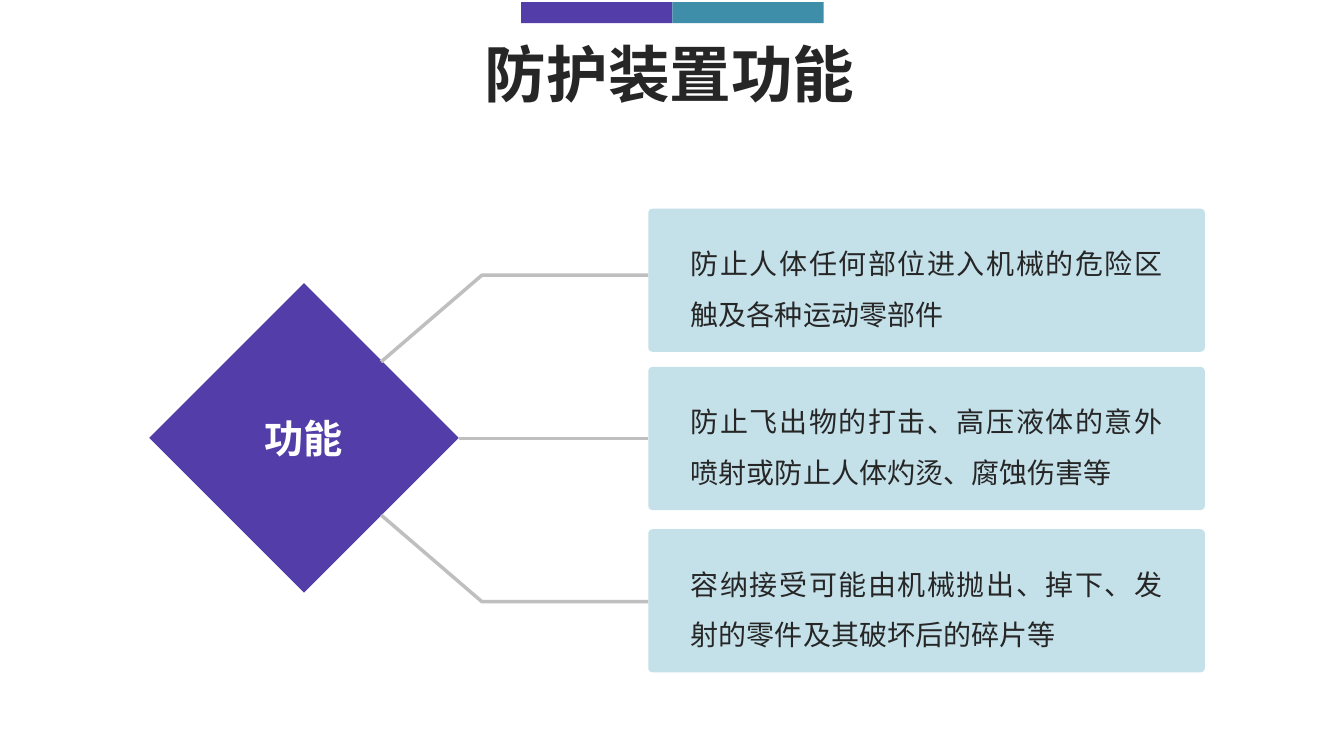
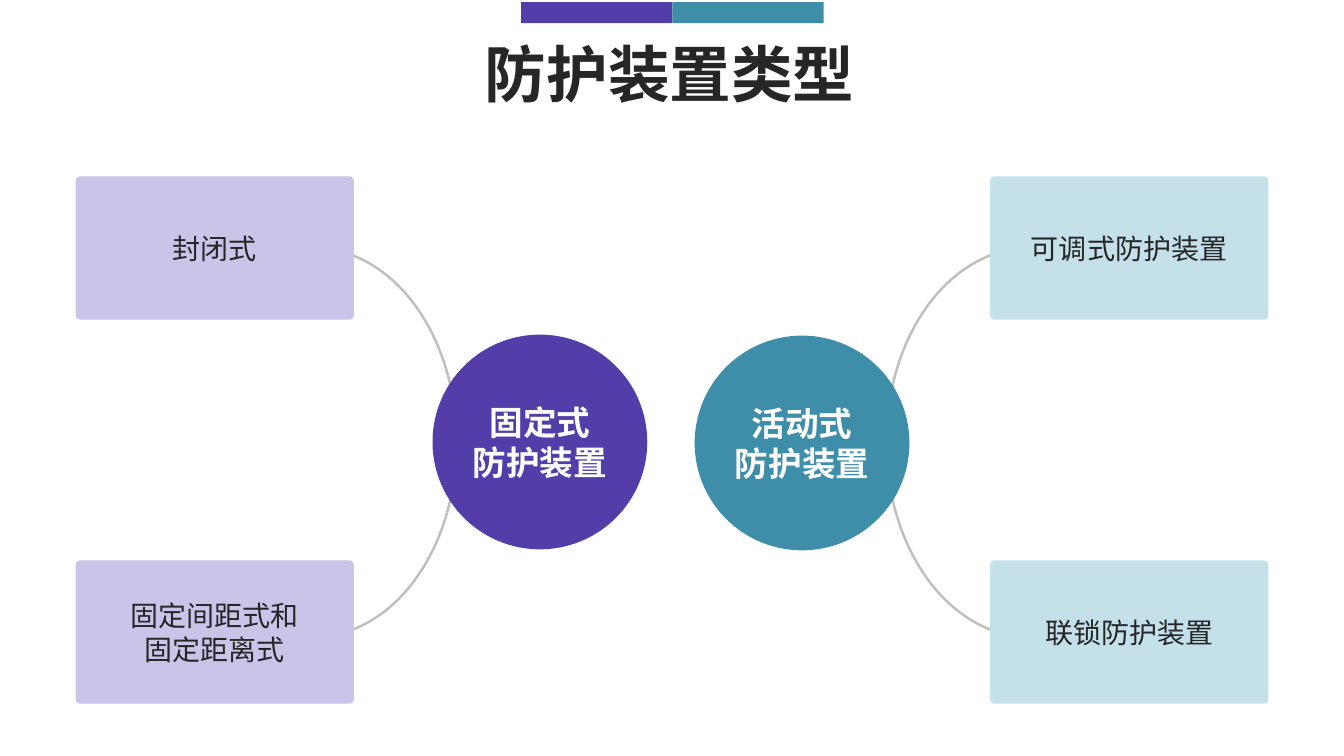
from dataclasses import dataclass

from lxml import etree
from pptx import Presentation
from pptx.dml.color import RGBColor
from pptx.enum import shapes, text
from pptx.oxml import ns
from pptx.shapes.autoshape import Shape
from pptx.slide import Slide
from pptx.util import Inches, Pt

PURPLE = RGBColor(0x53, 0x3E, 0xA9)
TEAL = RGBColor(0x3E, 0x8E, 0xA9)
PALE_PURPLE = RGBColor(0xCB, 0xC4, 0xE9)
PALE_TEAL = RGBColor(0xC4, 0xE0, 0xE9)
INK = RGBColor(0x26, 0x26, 0x26)
WHITE = RGBColor(0xFF, 0xFF, 0xFF)
GRAY = RGBColor(0xBF, 0xBF, 0xBF)
FONT = "Noto Sans CJK SC"
SHAPE = shapes.MSO_SHAPE
ALIGN = text.PP_ALIGN


@dataclass(frozen=True)
class TextStyle:
    size: int
    color: RGBColor
    bold: bool = False
    align: text.PP_ALIGN = ALIGN.CENTER
    spacing: float = 1.0


@dataclass(frozen=True)
class Area:
    left: float
    top: float
    width: float
    height: float

    def lengths(self) -> list[int]:
        return [Inches(n) for n in (self.left, self.top, self.width, self.height)]


@dataclass(frozen=True)
class Hub:
    label: str
    area: Area
    fill: RGBColor


@dataclass(frozen=True)
class TypeCard:
    label: str
    left: float
    top: float
    fill: RGBColor
    padding: float = 0.2


TITLE = TextStyle(44, INK, bold=True)
DIAMOND_LABEL = TextStyle(28, WHITE, bold=True)
HUB_LABEL = TextStyle(24, WHITE, bold=True)
CARD_LABEL = TextStyle(20, INK)
CARD_BODY = TextStyle(20, INK, align=ALIGN.JUSTIFY, spacing=1.5)

CARD_HEIGHT = 1.42


# Shared drawing functions
def write(box: Shape, words: str, style: TextStyle, padding: float = 0) -> None:
    frame = box.text_frame
    frame.text = words
    frame.word_wrap = True
    frame.vertical_anchor = text.MSO_ANCHOR.MIDDLE
    frame.margin_left = frame.margin_right = Inches(padding)
    frame.margin_top = frame.margin_bottom = 0
    for para in frame.paragraphs:
        para.alignment = style.align
        para.line_spacing = style.spacing
        for span in para.runs:
            font = span.font
            font.name, font.size, font.bold = FONT, Pt(style.size), style.bold
            font.color.rgb = style.color
            east_asian = etree.SubElement(font._element, ns.qn("a:ea"))
            east_asian.set("typeface", FONT)


def add_filled(page: Slide, kind: SHAPE, area: Area, fill: RGBColor) -> Shape:
    box = page.shapes.add_shape(kind, *area.lengths())
    box.shadow.inherit = False
    box.fill.solid()
    box.fill.fore_color.rgb = fill
    box.line.fill.background()
    return box


def add_card(page: Slide, area: Area, fill: RGBColor, words: str,
             style: TextStyle, padding: float) -> None:
    card = add_filled(page, SHAPE.ROUNDED_RECTANGLE, area, fill)
    card.adjustments[0] = 0.03
    write(card, words, style, padding)


def make_outline(box: Shape, width: float) -> None:
    box.shadow.inherit = False
    box.fill.background()
    box.line.color.rgb = GRAY
    box.line.width = Pt(width)


def add_page(deck: Presentation, title: str) -> Slide:
    page = deck.slides.add_slide(deck.slide_layouts[6])
    for index, color in enumerate((PURPLE, TEAL)):
        add_filled(page, SHAPE.RECTANGLE, Area(5.17 + 1.5 * index, 0.02, 1.5, 0.21), color)
    box = page.shapes.add_textbox(*Area(4.71, 0.31, 3.87, 0.82).lengths())
    write(box, title, TITLE)
    return page


# Slide 1: functions
def add_branch(page: Slide, center: float, direction: int) -> None:
    start, level = center + direction * 0.76, center + direction * 1.62
    builder = page.shapes.build_freeform(Inches(3.78), Inches(start))
    builder.add_line_segments(
        [(Inches(4.78), Inches(level)), (Inches(6.43), Inches(level))], close=False)
    make_outline(builder.convert_to_shape(), 2.5)


def add_functions(deck: Presentation) -> None:
    page = add_page(deck, "防护装置功能")
    center = 4.35

    diamond = add_filled(page, SHAPE.DIAMOND, Area(1.48, 2.81, 3.07, 3.07), PURPLE)
    write(diamond, "功能", DIAMOND_LABEL)

    # Branches to the cards
    for direction in (-1, 1):
        add_branch(page, center, direction)
    line = page.shapes.add_connector(
        shapes.MSO_CONNECTOR.STRAIGHT,
        Inches(4.55), Inches(center), Inches(6.43), Inches(center))
    line.line.color.rgb = GRAY
    line.line.width = Pt(2.5)
    etree.SubElement(line._element.spPr, ns.qn("a:effectLst"))

    cards = (
        (2.07, "防止人体任何部位进入机械的危险区触及各种运动零部件"),
        (3.64, "防止飞出物的打击、高压液体的意外喷射或防止人体灼烫、腐蚀伤害等"),
        (5.25, "容纳接受可能由机械抛出、掉下、发射的零件及其破坏后的碎片等"),
    )
    for top, words in cards:
        add_card(page, Area(6.43, top, 5.52, CARD_HEIGHT), PALE_TEAL, words, CARD_BODY, 0.41)


# Slide 2: types
def add_types(deck: Presentation) -> None:
    page = add_page(deck, "防护装置类型")

    # Curved links behind the circles and cards
    for kind, left in ((SHAPE.LEFT_BRACKET, 8.79), (SHAPE.RIGHT_BRACKET, 3.11)):
        bracket = page.shapes.add_shape(kind, *Area(left, 2.46, 1.42, 3.86).lengths())
        bracket.adjustments[0] = 1.96
        make_outline(bracket, 1.75)

    hubs = (
        Hub("固定式\n防护装置", Area(4.29, 3.32, 2.13, 2.13), PURPLE),
        Hub("活动式\n防护装置", Area(6.89, 3.33, 2.13, 2.13), TEAL),
    )
    for hub in hubs:
        write(add_filled(page, SHAPE.OVAL, hub.area, hub.fill), hub.label, HUB_LABEL)

    left, right, upper, lower = 0.75, 9.82, 1.75, 5.56
    cards = (
        TypeCard("封闭式", left, upper, PALE_PURPLE),
        TypeCard("固定间距式和固定距离式", left, lower, PALE_PURPLE, padding=0.5),
        TypeCard("可调式防护装置", right, upper, PALE_TEAL),
        TypeCard("联锁防护装置", right, lower, PALE_TEAL),
    )
    for card in cards:
        add_card(page, Area(card.left, card.top, 2.76, CARD_HEIGHT), card.fill,
                 card.label, CARD_LABEL, card.padding)


def main() -> None:
    deck = Presentation()
    deck.slide_width, deck.slide_height = Inches(13.33), Inches(7.5)
    add_functions(deck)
    add_types(deck)
    deck.save("out.pptx")


if __name__ == "__main__":
    main()
